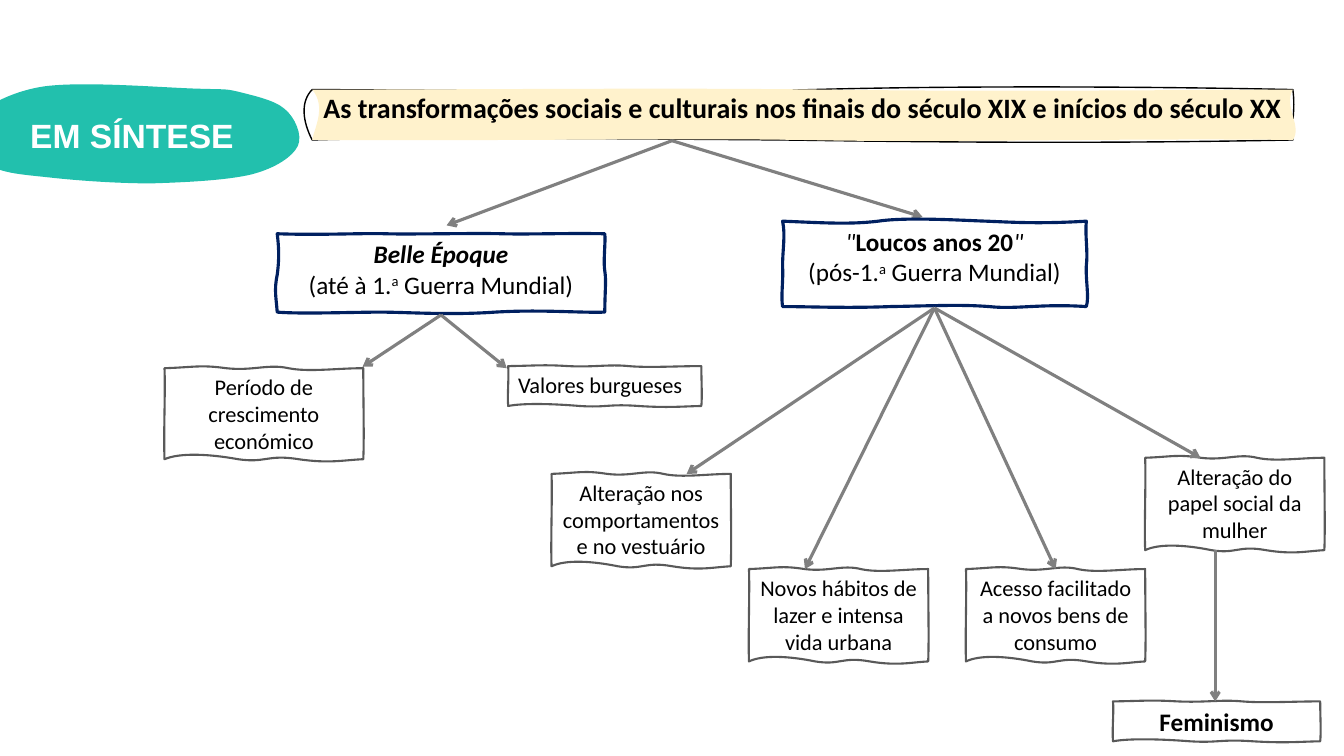
from lxml.etree import SubElement
from pptx import Presentation
from pptx.dml.color import RGBColor
from pptx.enum.shapes import MSO_CONNECTOR
from pptx.enum.text import MSO_ANCHOR, PP_ALIGN
from pptx.oxml.ns import qn
from pptx.util import Pt

TEAL = RGBColor(0x22, 0xC0, 0xAD)
CREAM = RGBColor(0xFF, 0xF2, 0xCC)
NAVY = RGBColor(0x00, 0x20, 0x60)
DARK_GREY = RGBColor(0x59, 0x59, 0x59)
ARROW_GREY = RGBColor(0x80, 0x80, 0x80)
BLACK = RGBColor(0, 0, 0)
WHITE = RGBColor(255, 255, 255)

# Outlines in percent of a box: start point, then Bézier triples
BLOB = [(69, 4), (59, 3), (34.5, -4), (23, 2), (12, 8), (3.5, 26.5), (1, 40),
        (-2, 53), (2.5, 72.5), (6.5, 80.5), (11, 90), (17, 91), (25, 94),
        (33, 97), (45, 100), (55.5, 100), (65.5, 99), (78, 97), (85.5, 91),
        (93, 84.5), (98, 72.5), (99.5, 62), (101, 51), (98.5, 32.5), (95.5, 24.5),
        (92.5, 15.5), (86, 11), (81.5, 7), (77.5, 4), (78.5, 5), (69, 4)]
BANNER_LINE = [(0, 0), (25, 2), (36, 8), (51, 0), (65.5, -8), (86, -6), (100, 0),
               (100.3, 44), (99.8, 68), (100, 100), (79.5, 108), (62, 104), (48, 100),
               (34, 98), (10, 94), (0, 100), (-1, 62), (-1.2, 24), (0, 0)]
BANNER_FILL = [(0, 0), (18.5, 0), (35.5, -4), (52, 0), (68.5, 4), (78, 2), (100, 0),
               (99, 34), (101, 72), (100, 100), (82.5, 96), (64.5, 106), (50, 100),
               (35.5, 96), (23, 102), (0, 100), (0.2, 78), (1.5, 34), (0, 0)]
TWENTIES = [(0, 0), (14, 2), (22, 4), (31.5, 0), (40.5, -5), (59, -1), (67, 0),
            (74.5, 1), (84, 3.5), (100, 0), (99.5, 16.5), (100.6, 35.5), (100, 52),
            (99.7, 68.5), (101, 88.5), (100, 100), (84.7, 96.5), (77, 103.5), (68, 100),
            (58.5, 97.5), (51.5, 99), (35.5, 100), (21, 102), (8.5, 100), (0, 100),
            (-0.6, 87), (0.3, 70), (0, 52), (0, 33), (1, 16.5), (0, 0)]
BELLE = [(0, 0), (13, 2), (26.5, -1), (33, 0), (40, 1), (60.5, -1), (68.5, 0),
         (77, 1), (88, -1), (100, 0), (100.3, 10), (99.5, 35), (100, 47.5),
         (100.5, 60), (100, 75.5), (100, 100), (92, 101), (80.5, 96.5), (66.5, 100),
         (52.5, 104), (39.5, 100), (31.5, 100), (23, 100), (7.5, 102.5), (0, 100),
         (-0.3, 82), (-1, 72), (0, 52.5), (0.6, 34.5), (0.6, 19), (0, 0)]
NOTE = [(0, 0), (14.6, -1), (18, -4), (31, 0), (44.4, 3.3), (52, -5), (62.4, 0),
        (72.5, 4.5), (87, 0), (100, 0), (100, 37), (100.5, 77), (100, 100),
        (90, 101), (83, 105), (67.4, 100), (51.7, 94.5), (51, 104.5), (37, 100),
        (23, 94.5), (8, 92.5), (0, 100), (-0.5, 72), (0.5, 24), (0, 0)]


def write(frame, paragraphs, size=16, font="Calibri", color=BLACK,
          align=PP_ALIGN.CENTER, spacing=None):
    """Each paragraph is a list of (text, style); styles: b bold, i italic, s superscript."""
    frame.word_wrap = True
    frame.vertical_anchor = MSO_ANCHOR.TOP
    for index, runs in enumerate(paragraphs):
        paragraph = frame.paragraphs[0] if index == 0 else frame.add_paragraph()
        paragraph.alignment = align
        paragraph.space_before = Pt(0)
        if spacing:
            paragraph.line_spacing = spacing
        for text, style in runs:
            run = paragraph.add_run()
            run.text = text
            run.font.name, run.font.size = font, Pt(size)
            run.font.bold, run.font.italic = "b" in style, "i" in style
            run.font.color.rgb = color
            if "s" in style:
                run.font._element.set("baseline", "30000")


def bend(shape, outline):
    """Give a freeform a Bézier contour, scaled to its box."""
    contour = next(shape._element.spPr.iter(qn("a:path")))
    for segment in list(contour):
        contour.remove(segment)
    start = SubElement(contour, qn("a:moveTo"))
    steps = [(start, outline[:1])]
    for k in range(1, len(outline), 3):
        steps.append((SubElement(contour, qn("a:cubicBezTo")), outline[k:k + 3]))
    for step, points in steps:
        for x, y in points:
            SubElement(step, qn("a:pt"), x=str(round(shape.width * x / 100)),
                       y=str(round(shape.height * y / 100)))
    SubElement(contour, qn("a:close"))


def hand_drawn(slide, box, outline, fill=None, line=None, weight=1):
    left, top, width, height = (Pt(value) for value in box)
    right, bottom = left + width, top + height
    builder = slide.shapes.build_freeform(left, top, scale=1.0)
    builder.add_line_segments([(right, top), (right, bottom), (left, bottom)], close=True)
    shape = builder.convert_to_shape()
    bend(shape, outline)
    shape.shadow.inherit = False
    if fill is None:
        shape.fill.background()
    else:
        shape.fill.solid()
        shape.fill.fore_color.rgb = fill
    if line is None:
        shape.line.fill.background()
    else:
        shape.line.color.rgb = line
        shape.line.width = Pt(weight)
    return shape


def topic(slide, box, paragraphs, outline=NOTE, line=DARK_GREY, weight=1.5, **text_format):
    shape = hand_drawn(slide, box, outline, line=line, weight=weight)
    write(shape.text_frame, paragraphs, **text_format)


def arrow(slide, start, end):
    connector = slide.shapes.add_connector(
        MSO_CONNECTOR.STRAIGHT, *(Pt(value) for value in (*start, *end)))
    connector.line.color.rgb = ARROW_GREY
    connector.line.width = Pt(2.25)
    SubElement(connector.line._get_or_add_ln(), qn("a:tailEnd"), type="arrow")
    SubElement(connector._element.spPr, qn("a:effectLst"))


def section_label(slide, box):
    hand_drawn(slide, box, BLOB, fill=TEAL)
    left, top, width, height = box
    label = slide.shapes.add_textbox(Pt(left + 39), Pt(top + 18), Pt(width - 39), Pt(37))
    write(label.text_frame, [[("EM SÍNTESE", "b")]], size=24, font="Arial",
          color=WHITE, align=PP_ALIGN.LEFT)


def heading(slide, box):
    hand_drawn(slide, box, BANNER_LINE, line=BLACK)
    hand_drawn(slide, box, BANNER_FILL, fill=CREAM)
    title = slide.shapes.title
    title.left, title.top, title.width, title.height = (Pt(value) for value in box)
    # Bring the title in front of its banner
    slide.shapes._spTree.append(title._element)
    title.text_frame.margin_left = title.text_frame.margin_right = 0
    write(title.text_frame, [[("As transformações sociais e culturais nos finais do "
                               "século XIX e inícios do século XX", "b")]],
          size=20, spacing=0.9)


def belle_epoque(slide, box):
    left, top, width, height = box
    topic(slide, box, [[("Belle Époque", "bi")],
                       [("(até à 1.", ""), ("a", "s"), (" Guerra Mundial)", "")]],
          BELLE, NAVY, 2.25, size=18)
    hub = (left + width / 2, top + height + 2)
    topic(slide, (left - 80.5, top + 96, 142, 65),
          [[("Período de crescimento económico", "")]])
    topic(slide, (left + 165, top + 94.5, 138, 28.5),
          [[("Valores burgueses", "")]], align=PP_ALIGN.LEFT)
    for end in ((left + 61, top + 95), (left + 164, top + 96)):
        arrow(slide, hub, end)


def roaring_twenties(slide, box):
    left, top, width, height = box
    topic(slide, box, [[('"', "i"), ("Loucos anos 20", "b"), ('"', "i")],
                       [("(pós-1.", ""), ("a", "s"), (" Guerra Mundial)", "")]],
          TWENTIES, NAVY, 2.25, size=18)
    hub = (left + width / 2, top + height + 1)
    # Offset of each note from the box, and where its arrow lands on its top edge
    notes = [("Alteração nos comportamentos e no vestuário", -165, 180.5, 96.5),
             ("Novos hábitos de lazer e intensa vida urbana", -24, 248.5, 40),
             ("Acesso facilitado a novos bens de consumo", 131, 248.5, 64),
             ("Alteração do papel social da mulher", 259, 169, 39.5)]
    for text, dx, dy, landing in notes:
        topic(slide, (left + dx, top + dy, 128, 66), [[(text, "")]])
        arrow(slide, hub, (left + dx + landing, top + dy))
    topic(slide, (left + 236, top + 343, 148, 28.5), [[("Feminismo", "b")]], size=18)
    arrow(slide, (left + 309, top + 235), (left + 309, top + 343))


def main():
    deck = Presentation()
    deck.slide_width, deck.slide_height = Pt(960), Pt(540)
    slide = deck.slides.add_slide(deck.slide_layouts[5])
    section_label(slide, (-24.5, 60.5, 238.5, 70.5))
    heading(slide, (223, 64, 700.5, 36))
    for end in ((319, 161), (659, 155)):
        arrow(slide, (480, 100.5), end)
    belle_epoque(slide, (198, 167, 234, 56))
    roaring_twenties(slide, (559, 158, 217, 61))
    deck.save("out.pptx")


if __name__ == "__main__":
    main()
